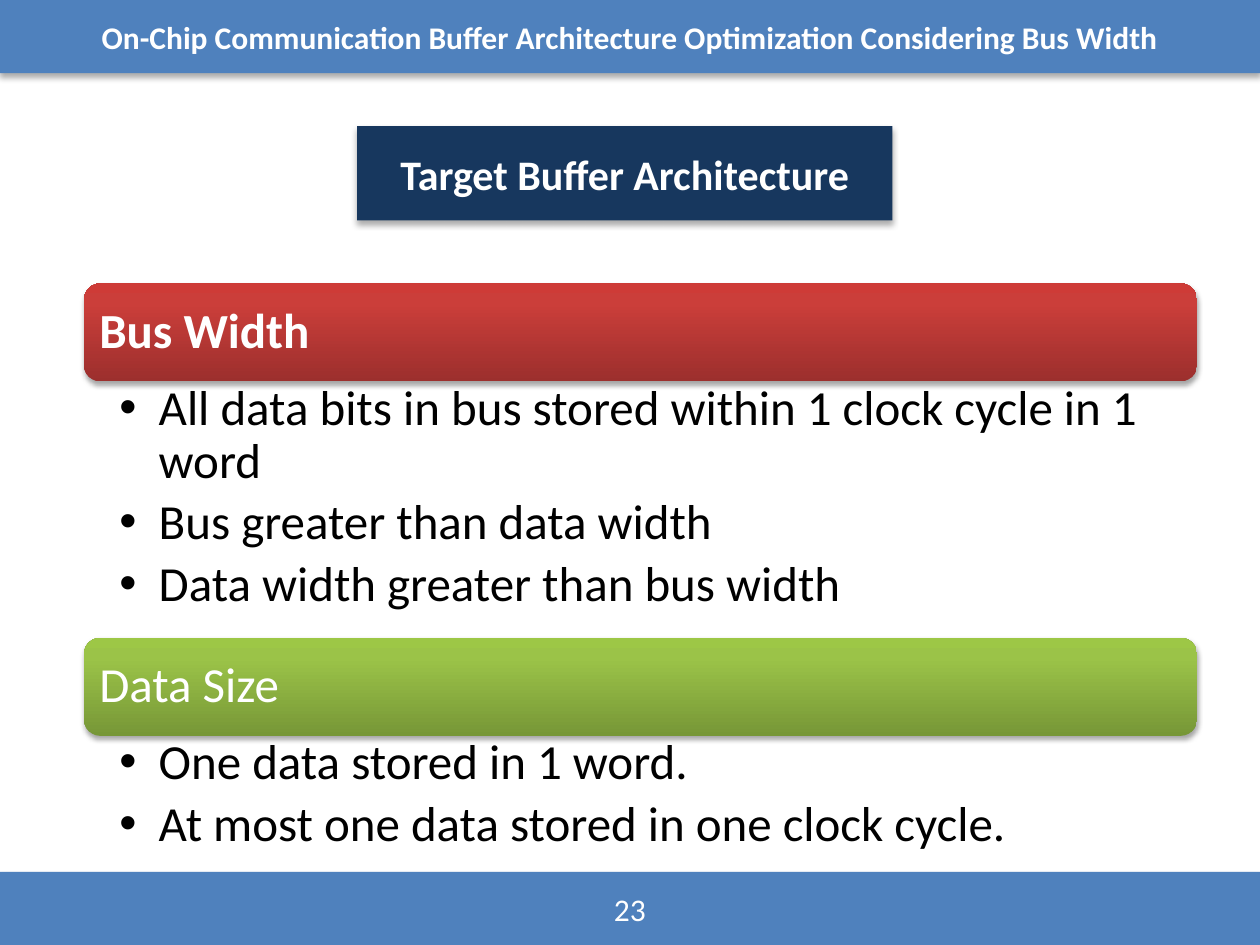
"""Build the Target Buffer Architecture slide."""
from lxml import etree
from pptx import Presentation
from pptx.dml.color import RGBColor
from pptx.enum.shapes import MSO_SHAPE
from pptx.enum.text import MSO_ANCHOR, PP_ALIGN
from pptx.oxml import parse_xml
from pptx.oxml.ns import qn
from pptx.util import Pt

RECT, ROUNDED = MSO_SHAPE.RECTANGLE, MSO_SHAPE.ROUNDED_RECTANGLE
CENTER, LEFT = PP_ALIGN.CENTER, PP_ALIGN.LEFT
MIDDLE, TOP = MSO_ANCHOR.MIDDLE, MSO_ANCHOR.TOP
BLUE, NAVY = RGBColor(0x4F, 0x81, 0xBD), RGBColor(0x17, 0x37, 0x5E)
WHITE, BLACK = RGBColor(255, 255, 255), RGBColor(0, 0, 0)
RED_STOPS = ((0, RGBColor(0x9C, 0x2F, 0x2D)), (80, RGBColor(0xCB, 0x3E, 0x3A)),
             (100, RGBColor(0xCE, 0x3B, 0x37)))
GREEN_STOPS = ((0, RGBColor(0x77, 0x97, 0x37)), (80, RGBColor(0x9B, 0xC3, 0x48)),
               (100, RGBColor(0x9D, 0xC7, 0x46)))
DRAWING_NS = 'xmlns:a="http://schemas.openxmlformats.org/drawingml/2006/main"'

WIDTH, HEIGHT, BAND_HEIGHT = 720, 540, 41.8
BANDS = [
    ("23", (0, HEIGHT - BAND_HEIGHT, WIDTH, BAND_HEIGHT), BLUE, 18, False),
    ("On-Chip Communication Buffer Architecture Optimization Considering Bus Width",
     (0, 0, WIDTH, BAND_HEIGHT), BLUE, 18, True),
    ("Target Buffer Architecture", (204, 72, 306, 54), NAVY, 24, True),
]
SECTIONS = [
    ("Bus Width", True, RED_STOPS, 162, 142.5,
     ["All data bits in bus stored within 1 clock cycle in 1 word",
      "Bus greater than data width",
      "Data width greater than bus width"]),
    ("Data Size", False, GREEN_STOPS, 364.5, 74.2,
     ["One data stored in 1 word.",
      "At most one data stored in one clock cycle."]),
]
SECTION_LEFT, SECTION_WIDTH, HEADING_HEIGHT, BODY_OFFSET = 48, 636, 56, 54
BULLET_INDENT = 22.5


def add_shadow(shape, opacity, blur, distance):
    shape.shadow.inherit = False
    effects = shape.element.spPr.find(qn("a:effectLst"))
    effects.append(parse_xml(
        f'<a:outerShdw {DRAWING_NS} blurRad="{Pt(blur)}" dist="{Pt(distance)}" '
        f'dir="5400000" rotWithShape="0"><a:srgbClr val="{BLACK}">'
        f'<a:alpha val="{opacity * 1000}"/></a:srgbClr></a:outerShdw>'))


def fill_gradient(shape, stops):
    shape.fill.gradient()
    gradient = shape.element.spPr.find(qn("a:gradFill"))
    marks = "".join(f'<a:gs pos="{position * 1000}"><a:srgbClr val="{color}"/></a:gs>'
                    for position, color in stops)
    gradient.getparent().replace(gradient, parse_xml(
        f'<a:gradFill {DRAWING_NS} rotWithShape="1"><a:gsLst>{marks}</a:gsLst>'
        '<a:lin ang="16200000" scaled="0"/></a:gradFill>'))


def write(shape, lines, size, color, bold=False, align=LEFT, anchor=MIDDLE,
          insets=(7.2, 3.6, 7.2, 3.6), spacing=None, after=0):
    frame = shape.text_frame
    frame.word_wrap, frame.vertical_anchor = True, anchor
    for side, inset in zip(("left", "top", "right", "bottom"), insets):
        setattr(frame, f"margin_{side}", Pt(inset))
    frame.text = "\n".join(lines)
    font_format = {"name": "Calibri", "size": Pt(size), "bold": bold}
    for paragraph in frame.paragraphs:
        paragraph.alignment = align
        paragraph.line_spacing = spacing
        paragraph.space_after = Pt(after)
        font = paragraph.runs[0].font
        for attribute, value in font_format.items():
            setattr(font, attribute, value)
        font.color.rgb = color


def add_bullets(shape):
    for paragraph in shape.text_frame.paragraphs:
        properties = paragraph._p.get_or_add_pPr()
        properties.set("marL", str(Pt(BULLET_INDENT)))
        properties.set("indent", str(Pt(-BULLET_INDENT)))
        etree.SubElement(properties, qn("a:buFont"), typeface="Arial")
        etree.SubElement(properties, qn("a:buChar"), char="•")


def main():
    deck = Presentation()
    deck.slide_width, deck.slide_height = Pt(WIDTH), Pt(HEIGHT)
    slide = deck.slides.add_slide(deck.slide_layouts[6])

    for label, box, color, size, bold in BANDS:
        band = slide.shapes.add_shape(RECT, *map(Pt, box))
        band.fill.solid()
        band.fill.fore_color.rgb = color
        band.line.fill.background()
        add_shadow(band, 32, 3.5, 2.2)
        write(band, [label], size, WHITE, bold, CENTER)

    for title, bold, stops, top, body_height, points in SECTIONS:
        heading = slide.shapes.add_shape(
            ROUNDED, Pt(SECTION_LEFT), Pt(top), Pt(SECTION_WIDTH), Pt(HEADING_HEIGHT))
        fill_gradient(heading, stops)
        heading.line.fill.background()
        add_shadow(heading, 35, 3.1, 1.8)
        write(heading, [title], 28, WHITE, bold, insets=(6, 6, 6, 6), spacing=0.9)
        body = slide.shapes.add_textbox(
            Pt(SECTION_LEFT), Pt(top + BODY_OFFSET), Pt(SECTION_WIDTH), Pt(body_height))
        write(body, points, 28, BLACK, anchor=TOP, insets=(20.2, 2.8, 15.8, 2.8),
              spacing=0.9, after=5)
        add_bullets(body)

    deck.save("out.pptx")


if __name__ == "__main__":
    main()
